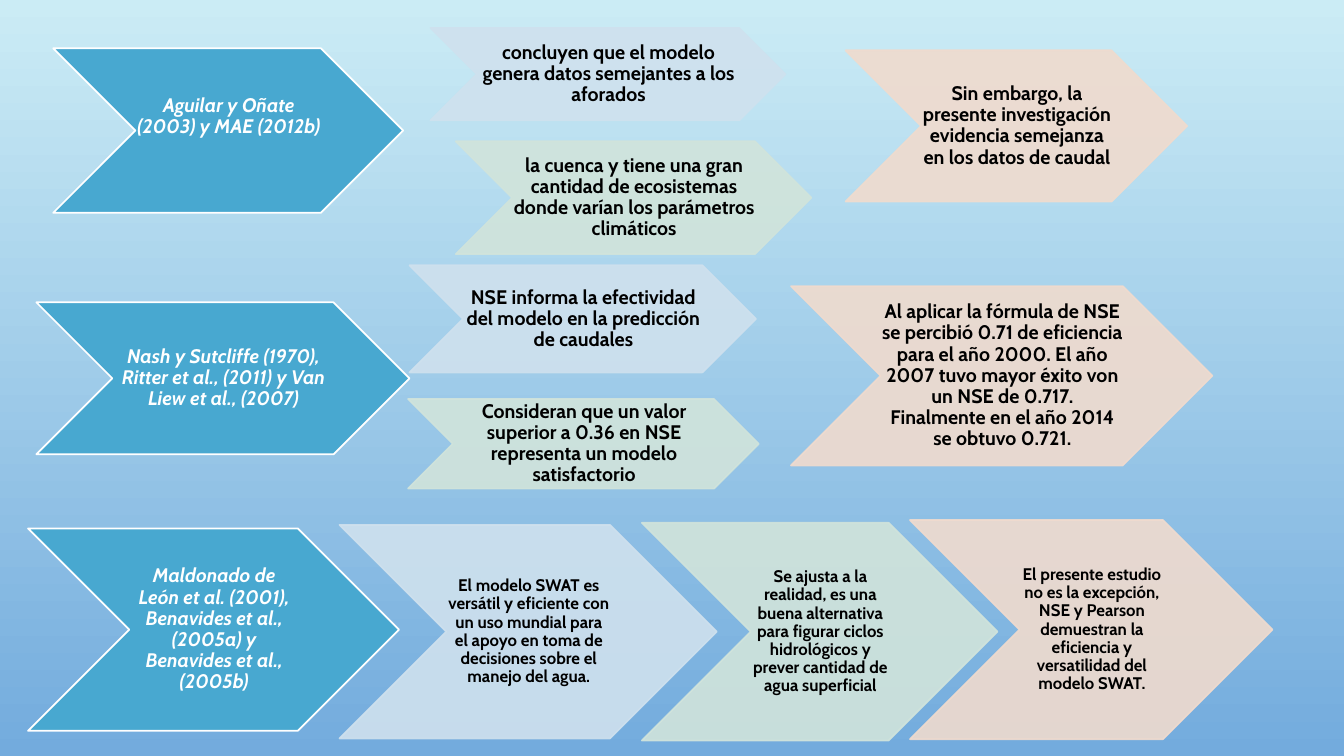
from lxml.etree import SubElement
from pptx import Presentation
from pptx.dml.color import RGBColor
from pptx.enum.shapes import MSO_SHAPE
from pptx.enum.text import MSO_ANCHOR, PP_ALIGN
from pptx.oxml.ns import qn
from pptx.util import Pt

COLORS = {
    "sky_top": "CBECF5",
    "sky_bottom": "73ABDD",
    "author": "48A8D0",
    "finding": "CFE1EE",
    "detail": "D1E4DB",
    "result": "F0DBCE",
    "white": "FFFFFF",
    "black": "000000",
}

AUTHORS = [
    ((38, 34.5, 250, 117.5), "Aguilar y Oñate (2003) y MAE (2012b)", 21),
    ((26, 216, 266.5, 108.5),
     "Nash y Sutcliffe (1970), Ritter et al., (2011) y Van Liew et al., (2007)", 0.7),
    ((20, 377.5, 265, 144.5),
     "Maldonado de León et al. (2001), Benavides et al., (2005a) y "
     "Benavides et al., (2005b)", 0.7),
]

STATEMENTS = [
    ("finding", (307.5, 20, 253.5, 66), 14,
     "concluyen que el modelo genera datos semejantes a los aforados"),
    ("detail", (325.5, 101, 254, 80.5), 14,
     "la cuenca y tiene una gran cantidad de ecosistemas donde varían los "
     "parámetros climáticos"),
    ("result", (604, 36, 244, 108), 14,
     "Sin embargo, la presente investigación evidencia semejanza en los datos "
     "de caudal"),
    ("finding", (292.5, 189.5, 247.5, 76.5), 14,
     "NSE informa la efectividad del modelo en la predicción de caudales"),
    ("detail", (291.5, 285, 250.5, 64), 14,
     "Consideran que un valor superior a 0.36 en NSE representa un modelo "
     "satisfactorio"),
    ("result", (565, 204.5, 301, 128), 14,
     "Al aplicar la fórmula de NSE se percibió 0.71 de eficiencia para el año "
     "2000. El año 2007 tuvo mayor éxito von un NSE de 0.717. Finalmente en el "
     "año 2014 se obtuvo 0.721."),
    ("finding", (242.5, 375, 269.5, 152.5), 12,
     "El modelo SWAT es versátil y eficiente con un uso mundial para el apoyo "
     "en toma de decisiones sobre el manejo del agua."),
    ("detail", (458.5, 373.5, 254, 155.5), 12,
     "Se ajusta a la realidad, es una buena alternativa para figurar ciclos "
     "hidrológicos y prever cantidad de agua superficial"),
    ("result", (650, 371.5, 259, 156.5), 12,
     "El presente estudio no es la excepción, NSE y Pearson demuestran la "
     "eficiencia y versatilidad del modelo SWAT."),
]


def rgb(name):
    return RGBColor.from_string(COLORS[name])


def paint_background(s):
    fill = s.background.fill
    fill.gradient()
    fill.gradient_angle = 270
    for stop, name in zip(fill.gradient_stops, ("sky_top", "sky_bottom")):
        stop.color.rgb = rgb(name)


def set_opacity(sp, percent):
    for color in sp.element.spPr.iter(qn("a:srgbClr")):
        SubElement(color, qn("a:alpha"), val=str(percent * 1000))


def add_chevron(s, box, fill, line):
    sp = s.shapes.add_shape(MSO_SHAPE.CHEVRON, *map(Pt, box))
    sp.shadow.inherit = False
    sp.fill.solid()
    sp.fill.fore_color.rgb = rgb(fill)
    sp.line.color.rgb = rgb(line)
    sp.line.width = Pt(1.25)
    return sp


def write_text(sp, text, size, color, italic=False, bottom=0.7):
    tf = sp.text_frame
    tf.word_wrap = True
    tf.vertical_anchor = MSO_ANCHOR.MIDDLE
    tf.margin_left, tf.margin_right = Pt(1), Pt(0)
    tf.margin_top, tf.margin_bottom = Pt(0.7), Pt(bottom)
    p = tf.paragraphs[0]
    p.alignment = PP_ALIGN.CENTER
    p.line_spacing = 0.9
    r = p.add_run()
    r.text = text
    r.font.name = "Cabin"
    r.font.size = Pt(size)
    r.font.bold = True
    r.font.italic = italic
    r.font.color.rgb = rgb(color)


def add_author(s, box, text, bottom):
    sp = add_chevron(s, box, "author", "white")
    write_text(sp, text, 14, "white", italic=True, bottom=bottom)


def add_statement(s, kind, box, size, text):
    sp = add_chevron(s, box, kind, kind)
    set_opacity(sp, 90)
    write_text(sp, text, size, "black")


def main():
    prs = Presentation()
    prs.slide_width, prs.slide_height = Pt(960), Pt(540)
    s = prs.slides.add_slide(prs.slide_layouts[6])
    paint_background(s)
    for author in AUTHORS:
        add_author(s, *author)
    for statement in STATEMENTS:
        add_statement(s, *statement)
    prs.save("out.pptx")


if __name__ == "__main__":
    main()
